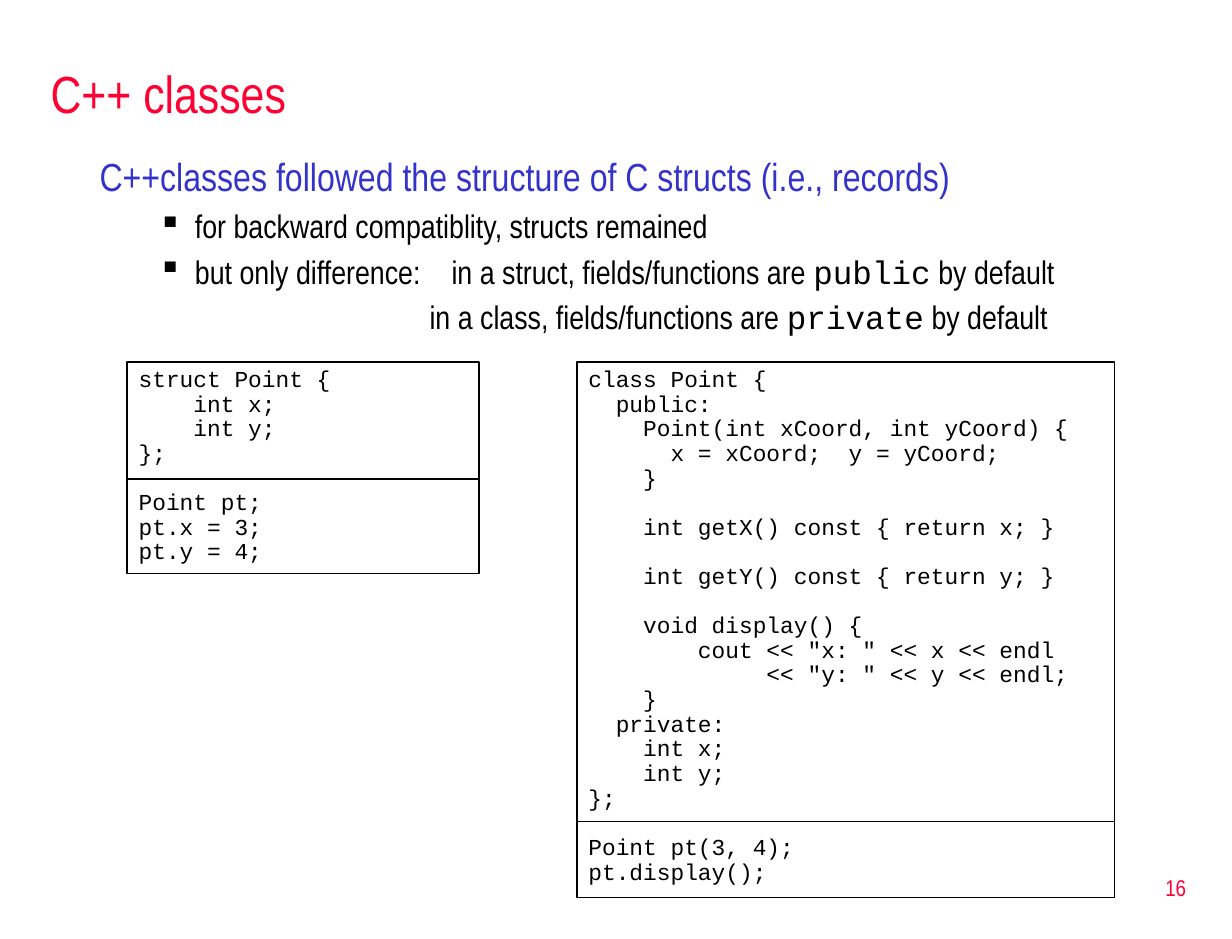
"""Build a slide that compares a C++ struct with a C++ class."""
from lxml import etree
from pptx import Presentation
from pptx.dml.color import RGBColor
from pptx.enum.shapes import MSO_CONNECTOR, MSO_SHAPE
from pptx.enum.text import MSO_ANCHOR, PP_ALIGN
from pptx.oxml.ns import qn
from pptx.util import Pt

RECT = MSO_SHAPE.RECTANGLE
LINE = MSO_CONNECTOR.STRAIGHT
TOP, MIDDLE = MSO_ANCHOR.TOP, MSO_ANCHOR.MIDDLE
LEFT, RIGHT = PP_ALIGN.LEFT, PP_ALIGN.RIGHT
PX = 9525
THEME = {
    "red": RGBColor(0xFF, 0x00, 0x33),
    "blue": RGBColor(0x33, 0x33, 0xCC),
    "black": RGBColor(0, 0, 0),
    "sans": "Arial Narrow",
    "mono": "Courier New",
    "title": 32,
    "head": 24,
    "item": 20,
    "code": 14,
    "page": 14,
}


def write(para, text, face="sans", size="code", color="black", align=LEFT):
    para.alignment = align
    run = para.add_run()
    run.text = text
    run.font.name = THEME[face]
    run.font.size = Pt(THEME[size])
    run.font.color.rgb = THEME[color]


def frame(left, top, width, height, anchor):
    box = deck.add_textbox(left * PX, top * PX, width * PX, height * PX)
    box.text_frame.word_wrap = True
    box.text_frame.vertical_anchor = anchor
    return box.text_frame


prs = Presentation()
prs.slide_width, prs.slide_height = 1008 * PX, 768 * PX
slide = prs.slides.add_slide(prs.slide_layouts[6])
deck = slide.shapes

page = frame(770, 700, 210, 51, MIDDLE)
write(page.paragraphs[0], "16", size="page", color="red", align=RIGHT)
title = frame(32, 40, 952, 72, MIDDLE)
write(title.paragraphs[0], "C++ classes", size="title", color="red")

ITEMS = [
    (36, -36, "", "head", "blue",
     [("C++classes followed the structure of C structs (i.e., records)", "sans")]),
    (78, -30, "▪", "item", "black",
     [("for backward compatiblity, structs remained", "sans")]),
    (78, -30, "▪", "item", "black",
     [("but only difference:\tin a struct, fields/functions are ", "sans"),
      ("public", "mono"), (" by default", "sans")]),
    (270, 0, "", "item", "black",
     [("in a class, fields/functions are ", "sans"),
      ("private", "mono"), (" by default", "sans")]),
]
body = frame(72, 120, 914, 208, TOP)
for row, (margin, indent, mark, size, color, runs) in enumerate(ITEMS):
    para = body.add_paragraph() if row else body.paragraphs[0]
    for text, face in runs:
        write(para, text, face=face, size=size, color=color)
    props = para._p.get_or_add_pPr()
    props.set("marL", str(margin * PX))
    props.set("indent", str(indent * PX))
    space = etree.SubElement(props, qn("a:spcBef"))
    etree.SubElement(space, qn("a:spcPct"), val="20000")
    if mark:
        etree.SubElement(props, qn("a:buChar"), char=mark)
    else:
        etree.SubElement(props, qn("a:buNone"))
    tabs = etree.SubElement(props, qn("a:tabLst"))
    etree.SubElement(tabs, qn("a:tab"), pos=str(241 * PX), algn="l")

STRUCT = """struct Point {
    int x;
    int y;
};

Point pt;
pt.x = 3;
pt.y = 4;"""
CLASS = """class Point {
  public:
    Point(int xCoord, int yCoord) {
      x = xCoord;  y = yCoord;
    }

    int getX() const { return x; }

    int getY() const { return y; }

    void display() {
        cout << "x: " << x << endl
             << "y: " << y << endl;
    }
  private:
    int x;
    int y;
};

Point pt(3, 4);
pt.display();"""
PANELS = [(104, 288, 173, 392, STRUCT), (472, 440, 438, 672, CLASS)]
for left, width, height, split, code in PANELS:
    panel = deck.add_shape(RECT, left * PX, 296 * PX, width * PX, height * PX)
    panel.shadow.inherit = False
    panel.fill.background()
    panel.line.color.rgb = THEME["black"]
    panel.line.width = Pt(1)
    text = panel.text_frame
    text.word_wrap = True
    text.vertical_anchor = TOP
    para, gap = text.paragraphs[0], 0
    for row, line in enumerate(code.split("\n")):
        if not line:
            gap = 15
            continue
        if row:
            para = text.add_paragraph()
        para.line_spacing = 0.9
        para.space_before = Pt(gap)
        write(para, line, face="mono")
        gap = 0
    rule = deck.add_connector(LINE, left * PX, split * PX, (left + width) * PX, split * PX)
    rule.line.color.rgb = THEME["black"]
    rule.line.width = Pt(1)
    etree.SubElement(rule._element.spPr, qn("a:effectLst"))

prs.save("out.pptx")
